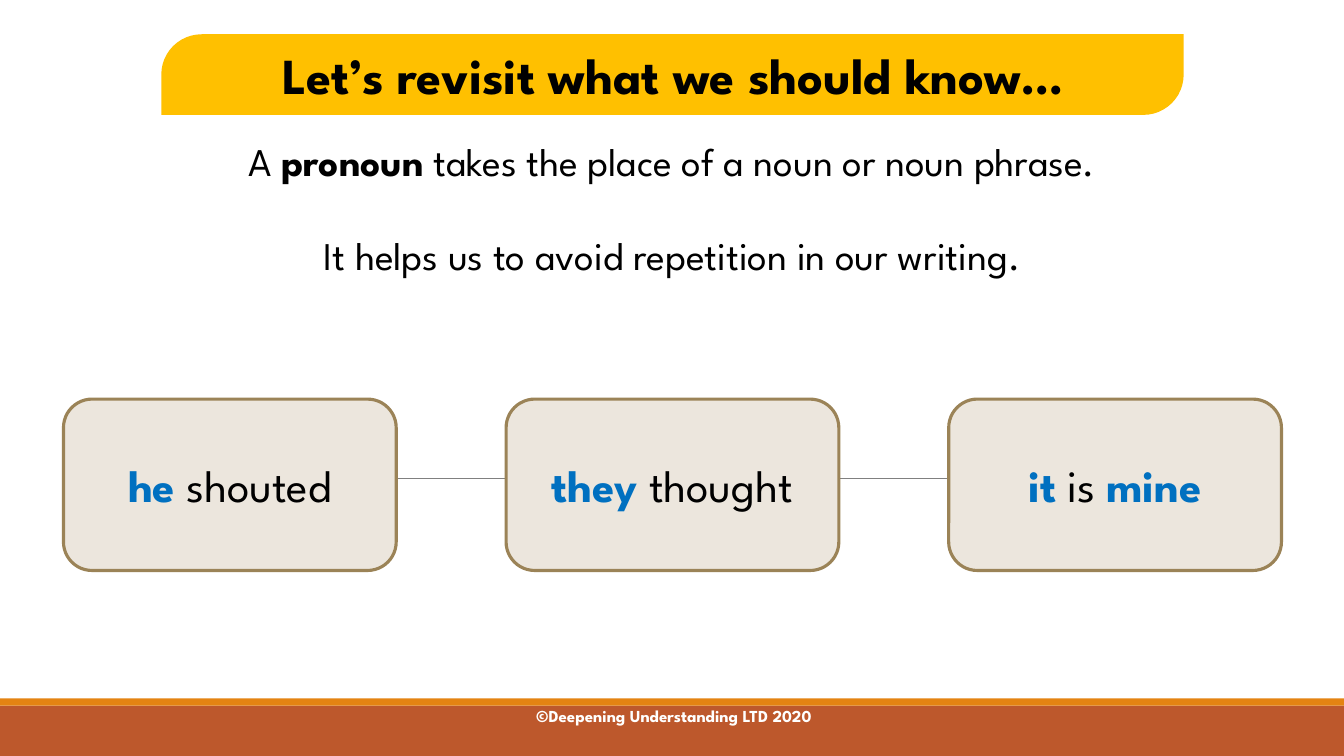
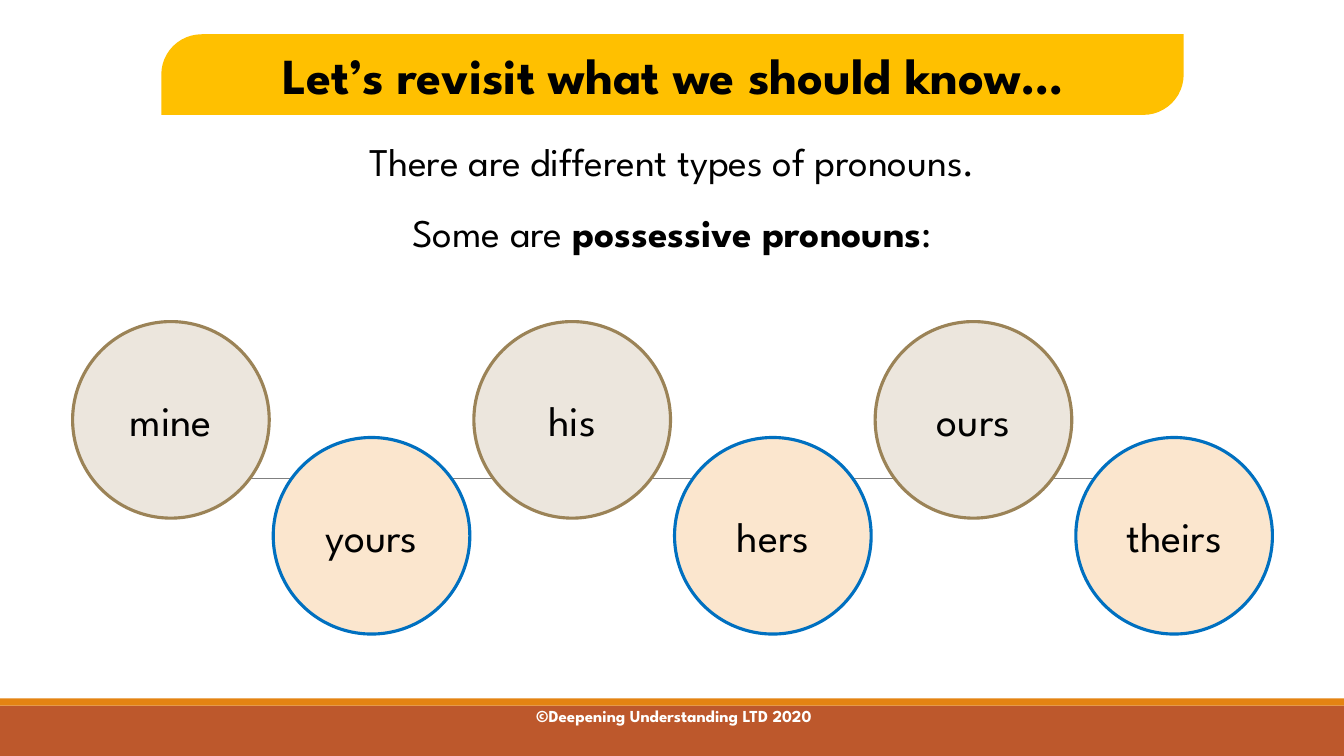
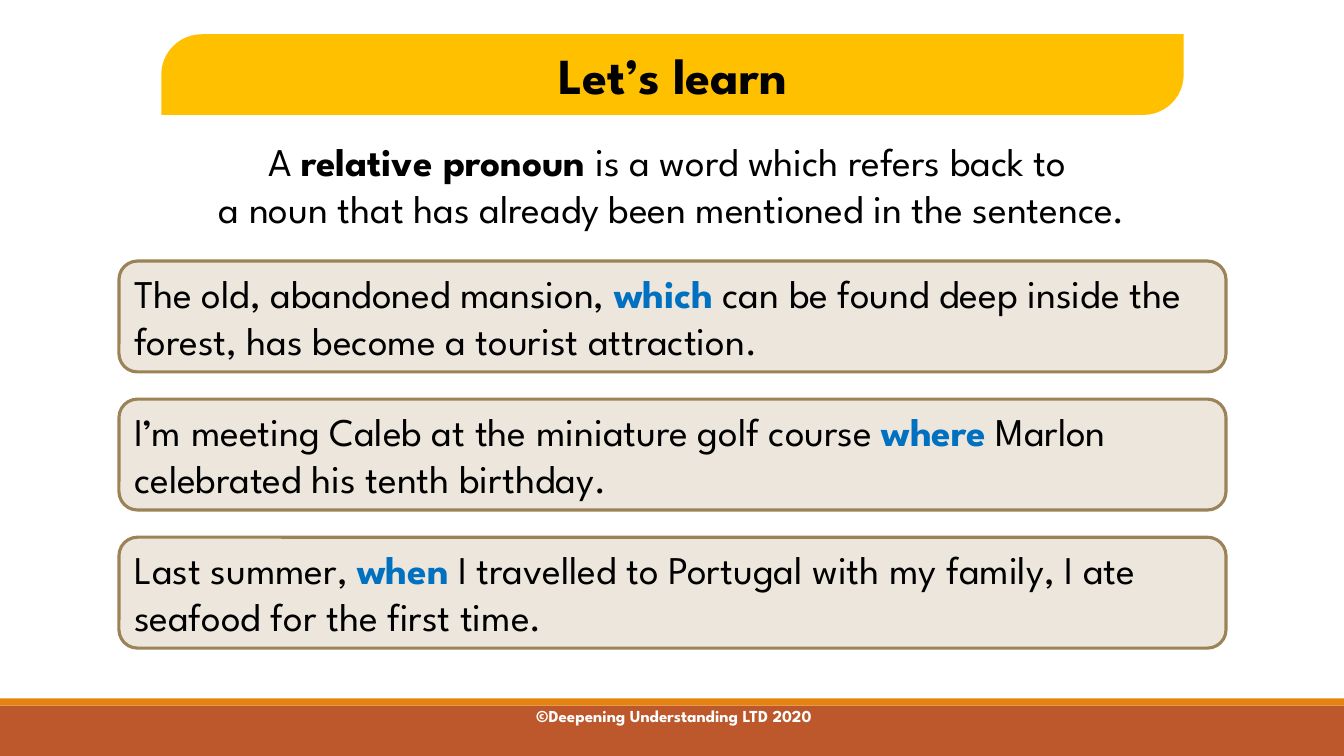
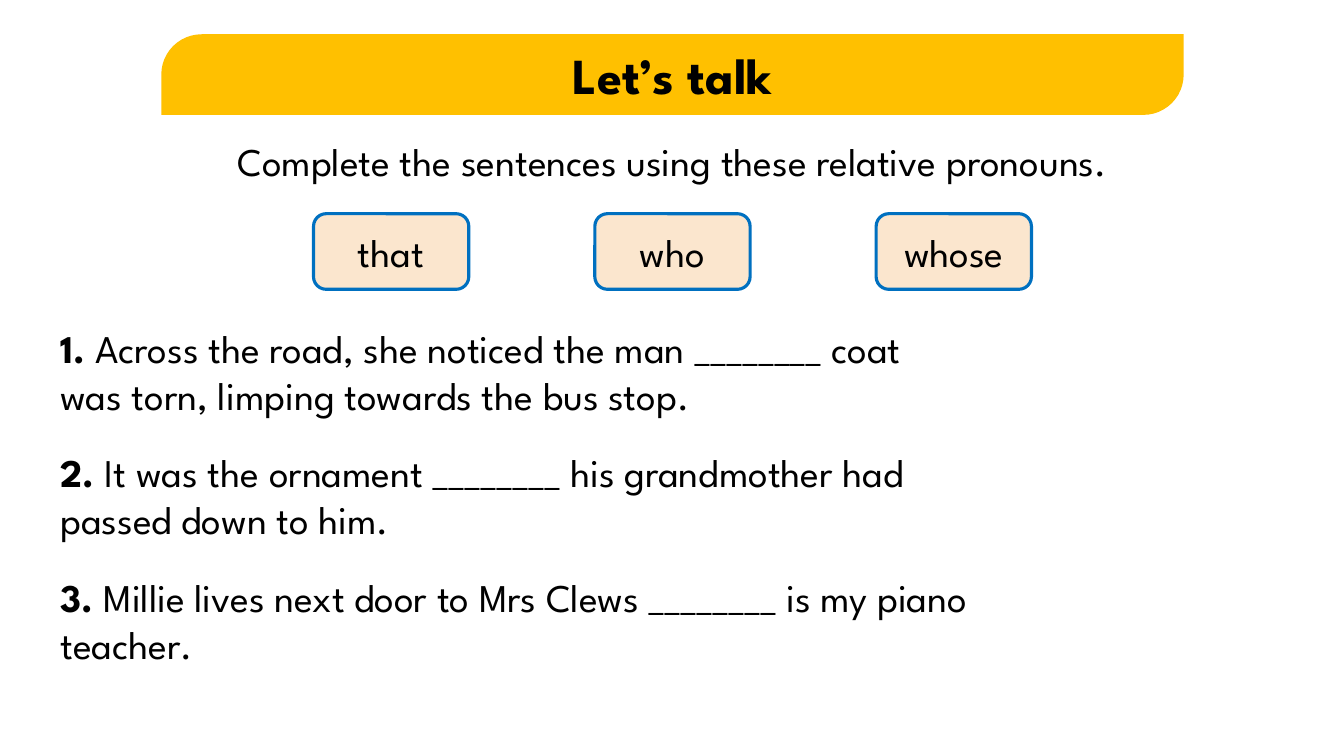
import pptx
import pptx.util
import pptx.dml.color
import pptx.enum.shapes
import pptx.enum.text
import pptx.oxml.ns
import lxml.etree

Inches = pptx.util.Inches
Pt = pptx.util.Pt
Shapes = pptx.enum.shapes.MSO_SHAPE
Align = pptx.enum.text.PP_ALIGN
Anchor = pptx.enum.text.MSO_ANCHOR

FONT = "League Spartan"
BLACK, WHITE, BLUE, GREY = "000000", "FFFFFF", "0070C0", "808080"
TITLE_YELLOW, FOOTER_RED, FOOTER_ORANGE = "FFC000", "BD582C", "E48312"
STONE = ("ECE6DD", "9B8357")
PEACH = ("FBE6CE", BLUE)
SLIDE_WIDTH, SLIDE_HEIGHT = 13.33, 7.5


def rgb(value):
    return pptx.dml.color.RGBColor.from_string(value)


def write(shape, paragraphs, size, color=BLACK, accent=BLACK, bold=False,
          align=Align.CENTER, gap=0):
    """Write paragraphs; *starred* words are bold in the accent colour."""
    frame = shape.text_frame
    frame.word_wrap = True
    for index, text in enumerate(paragraphs):
        paragraph = frame.paragraphs[0] if index == 0 else frame.add_paragraph()
        paragraph.alignment = align
        if index:
            paragraph.space_before = Pt(gap)
        for part_index, part in enumerate(text.split("*")):
            starred = part_index % 2 == 1
            for line_index, line in enumerate(part.split("\n")):
                if line_index:
                    paragraph.add_line_break()
                if not line:
                    continue
                run = paragraph.add_run()
                run.text = line
                run.font.name = FONT
                run.font.size = Pt(size)
                run.font.bold = bold or starred
                run.font.color.rgb = rgb(accent if starred else color)


def add_text(slide, box, paragraphs, size, **style):
    text_box = slide.shapes.add_textbox(*map(Inches, box))
    write(text_box, paragraphs, size, **style)


def add_block(slide, kind, box, fill, outline=None):
    shape = slide.shapes.add_shape(kind, *map(Inches, box))
    shape.shadow.inherit = False
    shape.fill.solid()
    shape.fill.fore_color.rgb = rgb(fill)
    if outline:
        shape.line.color.rgb = rgb(outline)
        shape.line.width = Pt(2.25)
    else:
        shape.line.fill.background()
    return shape


def add_card(slide, kind, box, colors, text, size, align=Align.CENTER):
    card = add_block(slide, kind, box, *colors)
    frame = card.text_frame
    frame.vertical_anchor = Anchor.MIDDLE
    if align == Align.CENTER:
        frame.margin_left = frame.margin_right = 0
    write(card, [text], size, accent=BLUE, align=align)


def add_rule(slide):
    rule = slide.shapes.add_connector(
        pptx.enum.shapes.MSO_CONNECTOR.STRAIGHT,
        Inches(1.32), Inches(4.75), Inches(12.12), Inches(4.75))
    rule.line.color.rgb = rgb(GREY)
    rule.line.width = Pt(0.5)
    properties = rule._element.spPr
    lxml.etree.SubElement(properties, pptx.oxml.ns.qn("a:effectLst"))


def add_footer(slide):
    add_block(slide, Shapes.RECTANGLE, (0, 7, SLIDE_WIDTH, 0.5), FOOTER_RED)
    add_block(slide, Shapes.RECTANGLE, (0, 6.93, SLIDE_WIDTH, 0.07), FOOTER_ORANGE)
    add_text(slide, (4.16, 6.95, 5.05, 0.3), ["©Deepening Understanding LTD 2020"],
             12, color=WHITE, bold=True)


def add_slide(presentation, title, introduction, gap=0, footer=True, rule=False):
    slide = presentation.slides.add_slide(presentation.slide_layouts[6])
    if footer:
        add_footer(slide)
    if rule:
        add_rule(slide)
    banner = add_block(slide, Shapes.ROUND_2_DIAG_RECTANGLE,
                       (1.6, 0.34, 10.14, 0.8), TITLE_YELLOW)
    banner.adjustments[0] = 0.5
    banner.text_frame.vertical_anchor = Anchor.MIDDLE
    write(banner, [title], 36, bold=True)
    add_text(slide, (0, 1.31, SLIDE_WIDTH, 0.57), introduction, 28, gap=gap)
    return slide


def add_pronoun_slide(presentation):
    slide = add_slide(
        presentation, "Let’s revisit what we should know…",
        ["A *pronoun* takes the place of a noun or noun phrase.",
         "It helps us to avoid repetition in our writing."], gap=33.5, rule=True)
    for index, text in enumerate(["*he* shouted", "*they* thought", "*it* is *mine*"]):
        add_card(slide, Shapes.ROUNDED_RECTANGLE,
                 (0.63 + 4.39 * index, 3.96, 3.3, 1.7), STONE, text, 32)


def add_possessive_slide(presentation):
    slide = add_slide(
        presentation, "Let’s revisit what we should know…",
        ["There are different types of pronouns.",
         "Some are *possessive pronouns*:"], gap=17, rule=True)
    words = ["mine", "yours", "his", "hers", "ours", "theirs"]
    for index, word in enumerate(words):
        top, colors = ((3.19, STONE), (4.34, PEACH))[index % 2]
        add_card(slide, Shapes.OVAL, (0.72 + 1.99 * index, top, 1.95, 1.95),
                 colors, word, 30)


def add_relative_slide(presentation):
    slide = add_slide(
        presentation, "Let’s learn",
        ["A *relative pronoun *is a word which refers back to \n"
         "a noun that has already been mentioned in the sentence."])
    sentences = [
        "The old, abandoned mansion, *which* can be found deep inside the forest, "
        "has become a tourist attraction.",
        "I’m meeting Caleb at the miniature golf course *where* Marlon celebrated "
        "his tenth birthday.",
        "Last summer, *when* I travelled to Portugal with my family, I ate seafood "
        "for the first time.",
    ]
    for index, sentence in enumerate(sentences):
        add_card(slide, Shapes.ROUNDED_RECTANGLE,
                 (1.18, 2.59 + 1.37 * index, 10.98, 1.1), STONE, sentence, 28,
                 align=Align.LEFT)


def add_talk_slide(presentation):
    slide = add_slide(presentation, "Let’s talk",
                      ["Complete the sentences using these relative pronouns."],
                      footer=False)
    add_text(slide, (0.5, 3.17, 12, 3.66), [
        "*1. *Across the road, she noticed the man ________ coat\n"
        "was torn, limping towards the bus stop.",
        "*2. *It was the ornament ________ his grandmother had\n"
        "passed down to him.",
        "*3. *Millie lives next door to Mrs Clews ________ is my piano\n"
        "teacher.",
    ], 28, align=Align.LEFT, gap=21.5)
    for index, word in enumerate(["that", "who", "whose"]):
        add_card(slide, Shapes.ROUNDED_RECTANGLE,
                 (3.11 + 2.79 * index, 2.12, 1.54, 0.75), PEACH, word, 28)


def main():
    presentation = pptx.Presentation()
    presentation.slide_width = Inches(SLIDE_WIDTH)
    presentation.slide_height = Inches(SLIDE_HEIGHT)
    add_pronoun_slide(presentation)
    add_possessive_slide(presentation)
    add_relative_slide(presentation)
    add_talk_slide(presentation)
    presentation.save("out.pptx")


if __name__ == "__main__":
    main()
